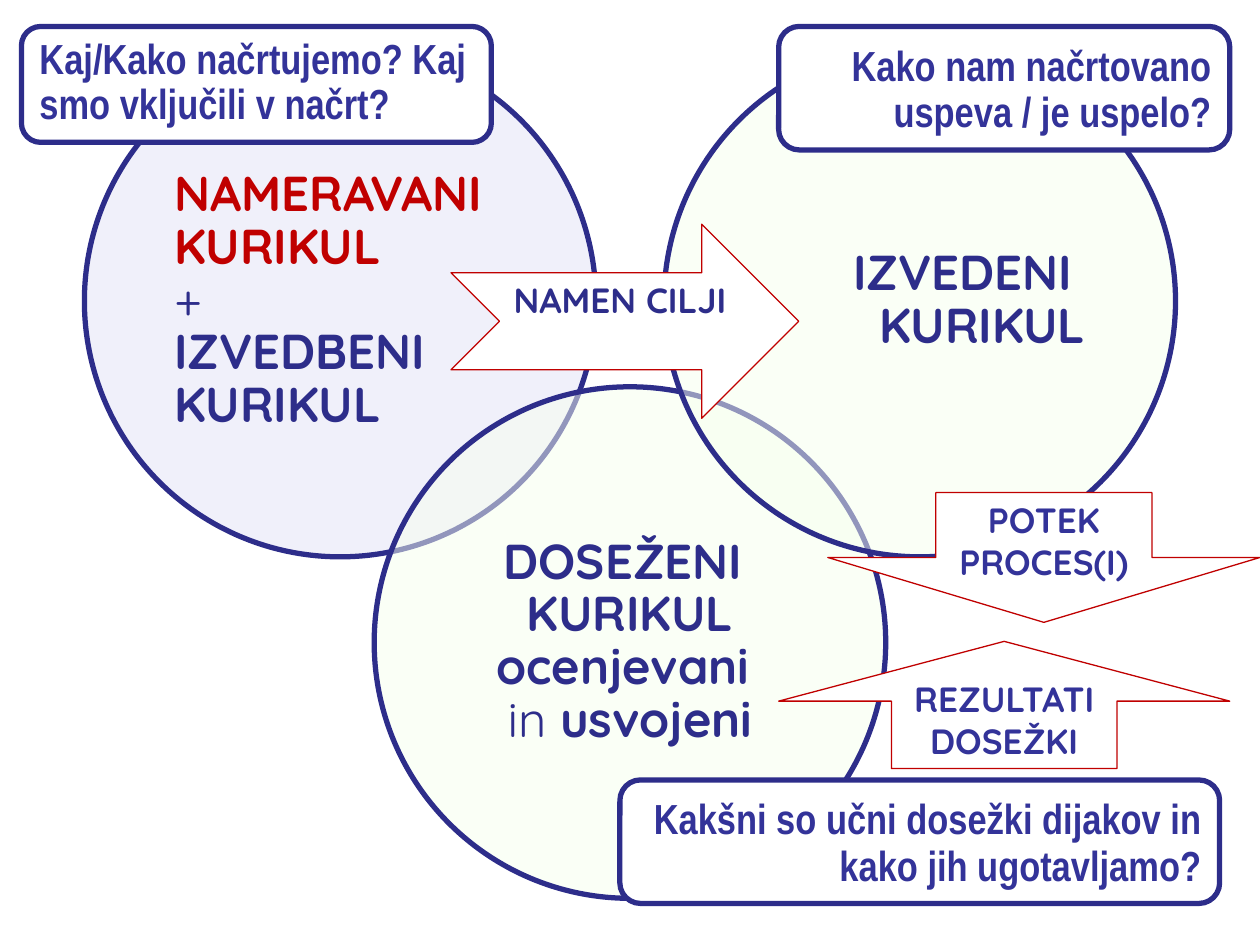
from lxml.etree import SubElement
from pptx import Presentation
from pptx.dml.color import RGBColor
from pptx.enum.shapes import MSO_SHAPE
from pptx.enum.text import MSO_ANCHOR, MSO_AUTO_SIZE, PP_ALIGN
from pptx.oxml.ns import qn
from pptx.util import Inches, Pt

THEME = {
    "navy": "2D2D8A", "indigo": "333399", "red": "C00000", "sky": "0099FF",
    "lilac": "E2E2F6", "mint": "F7FFEF", "white": "FFFFFF",
    "round": "Quicksand", "narrow": "Arial Narrow", "plain": "Arial",
    "big": 28, "medium": 24, "small": 20, "thick": 3, "thin": 0.75,
}
LEFT, CENTER, RIGHT = PP_ALIGN.LEFT, PP_ALIGN.CENTER, PP_ALIGN.RIGHT

prs = Presentation()
prs.slide_width, prs.slide_height = Inches(10), Inches(7.5)
s = prs.slides.add_slide(prs.slide_layouts[6])

# Grid of 100 columns by 75 rows
COL, ROW = prs.slide_width / 100, prs.slide_height / 75


def add_block(kind, x, y, w, h, fill, line, weight):
    sp = s.shapes.add_shape(kind, int(x * COL), int(y * ROW), int(w * COL), int(h * ROW))
    sp.shadow.inherit = False
    sp.fill.solid()
    sp.fill.fore_color.rgb = RGBColor.from_string(THEME[fill])
    sp.line.color.rgb = RGBColor.from_string(THEME[line])
    sp.line.width = Pt(THEME[weight])
    tf = sp.text_frame
    tf.word_wrap = True
    tf.vertical_anchor = MSO_ANCHOR.TOP
    return sp


def add_text(p, text, color="navy", size="big", font="round", bold=True, align=LEFT, spacing=0.9):
    p.alignment = align
    p.line_spacing = spacing
    r = p.add_run()
    r.text = text
    r.font.name = THEME[font]
    r.font.size = Pt(THEME[size])
    r.font.bold = bold
    r.font.color.rgb = RGBColor.from_string(THEME[color])


# Overlapping circles: column step, top row, fill, alignment, lines of runs
DIAMETER, STEP = 40.6, 23
circles = [
    (0, 3.6, "lilac", LEFT, [
        [("NAMERAVANI", {"color": "red"})],
        [("KURIKUL", {"color": "red"})],
        [("+", {"bold": False})],
        [("IZVEDBENI", {})],
        [("KURIKUL", {})],
    ]),
    (1, 30.7, "mint", CENTER, [
        [("DOSEŽENI ", {})],
        [("KURIKUL", {})],
        [("ocenjevani ", {})],
        [("in", {"bold": False}), (" usvojeni", {})],
    ]),
    (2, 3.6, "mint", RIGHT, [
        [("IZVEDENI ", {})],
        [("KURIKUL", {})],
    ]),
]
for step, top, fill, align, lines in circles:
    sp = add_block(MSO_SHAPE.OVAL, 6.7 + step * STEP, top, DIAMETER, DIAMETER, fill, "navy", "thick")
    color = sp.fill._xPr.find(qn("a:solidFill"))[0]
    SubElement(color, qn("a:alpha")).set("val", "50000")
    tf = sp.text_frame
    tf.vertical_anchor = MSO_ANCHOR.MIDDLE
    tf.margin_left = tf.margin_right = tf.margin_top = tf.margin_bottom = Inches(0.12)
    for i, runs in enumerate(lines):
        p = tf.add_paragraph() if i else tf.paragraphs[0]
        for text, style in runs:
            add_text(p, text, align=align, **style)

# Question boxes
questions = [
    (61.8, 2.1, 35.8, 9.8, RIGHT, "Kako nam načrtovano uspeva / je uspelo?"),
    (1.7, 2.1, 37.3, 9.2, LEFT, "Kaj/Kako načrtujemo? Kaj smo vključili v načrt?"),
    (49.2, 61.9, 47.6, 9.8, RIGHT, "Kakšni so učni dosežki dijakov in kako jih ugotavljamo?"),
]
for x, y, w, h, align, text in questions:
    sp = add_block(MSO_SHAPE.FLOWCHART_ALTERNATE_PROCESS, x, y, w, h, "white", "navy", "thick")
    sp.text_frame.auto_size = MSO_AUTO_SIZE.SHAPE_TO_FIT_TEXT
    p = sp.text_frame.paragraphs[0]
    if align == RIGHT:
        add_text(p, " ", color="sky", font="plain", align=align)
    add_text(p, text, color="indigo", size="medium", font="narrow", align=align)

# Block arrows
arrows = [
    (MSO_SHAPE.NOTCHED_RIGHT_ARROW, 35.8, 17.8, 27.6, 15.4, None, "navy", "NAMEN CILJI "),
    (MSO_SHAPE.DOWN_ARROW, 65.7, 39.1, 34.3, 10.3, None, "indigo", "POTEK PROCES(I)"),
    (MSO_SHAPE.UP_ARROW, 61.8, 50.9, 35.8, 10.1, 0.47, "indigo", "REZULTATI DOSEŽKI"),
]
for kind, x, y, w, h, head, color, text in arrows:
    sp = add_block(kind, x, y, w, h, "white", "red", "thin")
    if head:
        sp.adjustments[1] = head
    sp.text_frame.auto_size = MSO_AUTO_SIZE.SHAPE_TO_FIT_TEXT
    add_text(sp.text_frame.paragraphs[0], text, color=color, size="small", align=CENTER, spacing=1.0)

prs.save("out.pptx")
